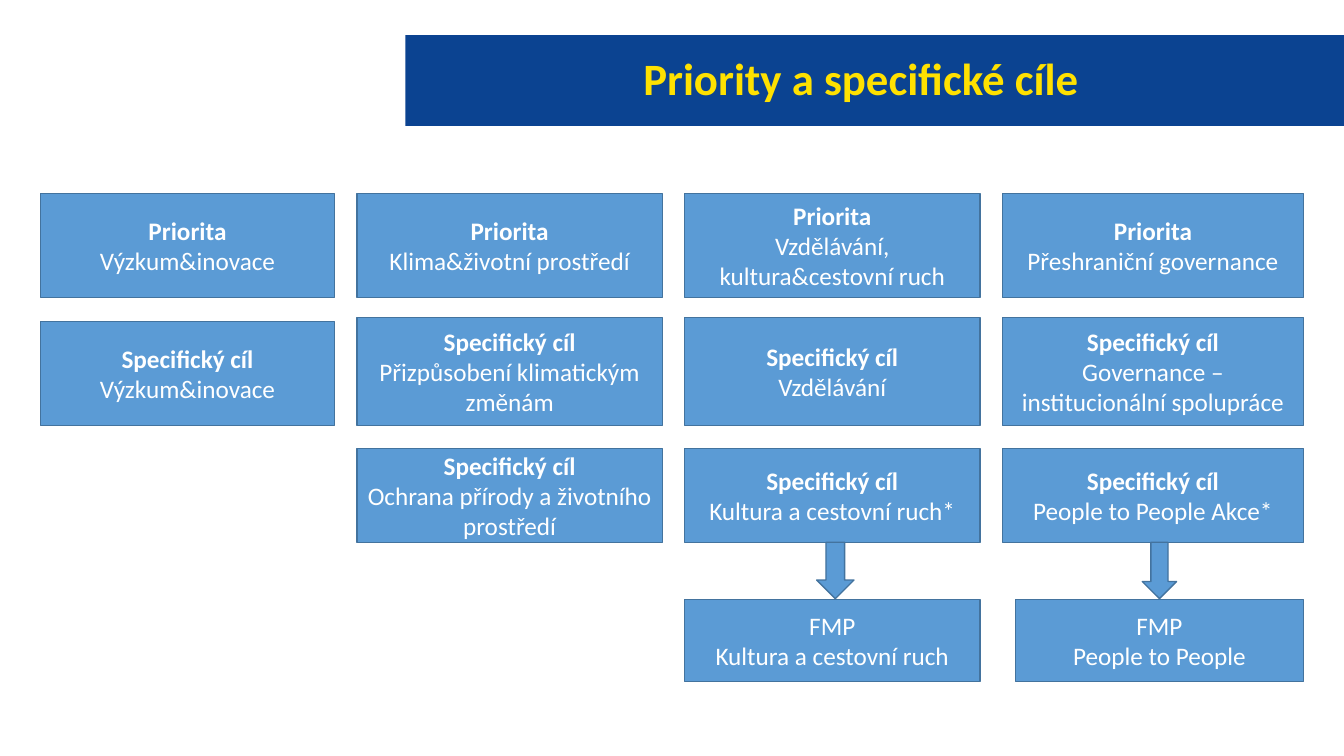
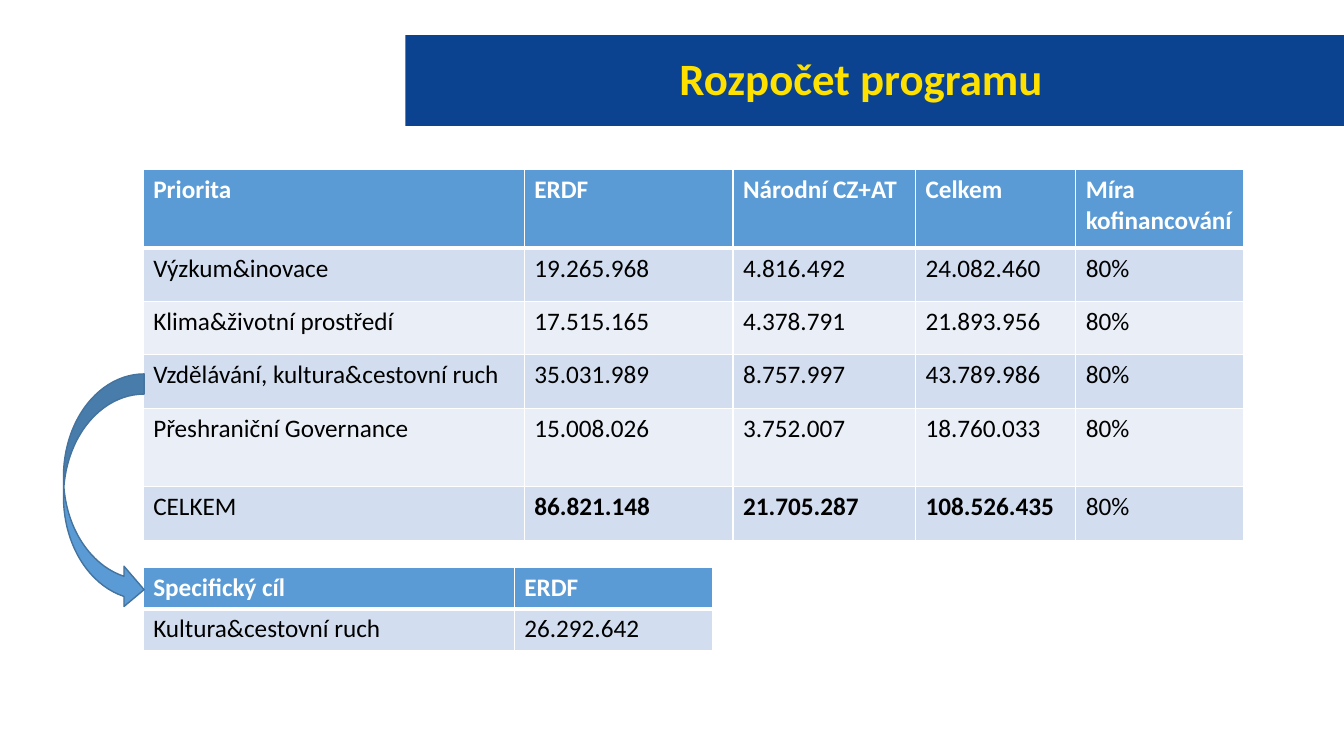
"""Build two slides on programme priorities and budget."""
from dataclasses import dataclass

from lxml.etree import SubElement
from pptx import Presentation
from pptx.dml.color import RGBColor
from pptx.enum.shapes import MSO_SHAPE
from pptx.enum.text import MSO_ANCHOR, PP_ALIGN
from pptx.oxml.ns import qn
from pptx.shapes.autoshape import Shape
from pptx.slide import Slide, SlideLayout
from pptx.table import _Cell
from pptx.text.text import Font
from pptx.util import Inches, Pt

NAVY = RGBColor(0x0B, 0x43, 0x91)
YELLOW = RGBColor(0xFF, 0xE1, 0x00)
BLUE = RGBColor(0x5B, 0x9B, 0xD5)
OUTLINE = RGBColor(0x43, 0x73, 0x9E)
PALE = RGBColor(0xD2, 0xDE, 0xEF)
PALEST = RGBColor(0xEA, 0xEF, 0xF7)
WHITE = RGBColor(0xFF, 0xFF, 0xFF)
BLACK = RGBColor(0x00, 0x00, 0x00)

TITLE_FORMAT = {"name": "Calibri", "size": Pt(32), "bold": True}
TEXT_FORMAT = {"name": "Calibri", "size": Pt(18), "bold": False}
STRONG_FORMAT = TEXT_FORMAT | {"bold": True}

COLUMNS = ((0.4, 2.92), (3.54, 3.03), (6.79, 2.93), (9.94, 2.99))
ROWS = ((1.92, 1.03), (3.15, 1.07), (4.45, 0.93), (5.95, 0.81))
HEADINGS = ("Priorita", "Specifický cíl", "Specifický cíl", "FMP")
FMP_ROW = 3


@dataclass(frozen=True)
class Card:
    """A box of the priority grid, optionally trimmed on its left or top."""

    column: int
    row: int
    text: str
    trim_left: float = 0
    trim_top: float = 0


@dataclass(frozen=True)
class Arrow:
    """A block arrow with its place in inches."""

    preset: MSO_SHAPE
    box: tuple[float, float, float, float]


@dataclass(frozen=True)
class Budget:
    """A budget table with its sizes in inches."""

    left: float
    top: float
    widths: tuple[float, ...]
    heights: tuple[float, ...]
    rows: tuple[tuple[str, ...], ...]
    strong: frozenset[tuple[int, int]] = frozenset()


CARDS = (
    Card(0, 0, "Výzkum&inovace"),
    Card(1, 0, "Klima&životní prostředí"),
    Card(2, 0, "Vzdělávání, kultura&cestovní ruch"),
    Card(3, 0, "Přeshraniční governance"),
    Card(0, 1, "Výzkum&inovace", trim_top=0.04),
    Card(1, 1, "Přizpůsobení klimatickým změnám"),
    Card(2, 1, "Vzdělávání"),
    Card(3, 1, "Governance – institucionální spolupráce"),
    Card(1, 2, "Ochrana přírody a životního prostředí"),
    Card(2, 2, "Kultura a cestovní ruch*"),
    Card(3, 2, "People to People Akce*"),
    Card(2, 3, "Kultura a cestovní ruch"),
    Card(3, 3, "People to People", trim_left=0.13),
)
FMP_ARROWS = (
    Arrow(MSO_SHAPE.DOWN_ARROW, (8.1, 5.38, 0.37, 0.56)),
    Arrow(MSO_SHAPE.DOWN_ARROW, (11.33, 5.38, 0.34, 0.56)),
)
DETAIL_ARROW = Arrow(MSO_SHAPE.CURVED_RIGHT_ARROW, (0.63, 3.71, 0.8, 2.34))

PROGRAMME = Budget(
    1.42, 1.68,
    (3.78, 2.07, 1.81, 1.59, 1.66),
    (0.78, 0.53, 0.53, 0.53, 0.78, 0.53),
    (
        ("Priorita", "ERDF", "Národní CZ+AT", "Celkem", "Míra kofinancování"),
        ("Výzkum&inovace", "19.265.968", "4.816.492", "24.082.460", "80%"),
        ("Klima&životní prostředí", "17.515.165", "4.378.791", "21.893.956", "80%"),
        ("Vzdělávání, kultura&cestovní ruch", "35.031.989", "8.757.997", "43.789.986", "80%"),
        ("Přeshraniční Governance", "15.008.026", "3.752.007", "18.760.033", "80%"),
        ("CELKEM", "86.821.148", "21.705.287", "108.526.435", "80%"),
    ),
    frozenset({(5, 1), (5, 2), (5, 3)}),
)
CULTURE = Budget(
    1.42, 5.63,
    (3.68, 1.97),
    (0.41, 0.41),
    (("Specifický cíl", "ERDF"), ("Kultura&cestovní ruch", "26.292.642")),
)


def format_font(font: Font, values: dict, color: RGBColor) -> None:
    """Apply format values and a colour to a font."""
    for key, value in values.items():
        setattr(font, key, value)
    font.color.rgb = color


def add_block(slide: Slide, preset: MSO_SHAPE, box: tuple[float, ...],
              fill: RGBColor = BLUE, outline: RGBColor | None = OUTLINE) -> Shape:
    """Draw a filled shape without a shadow."""
    block = slide.shapes.add_shape(preset, *map(Inches, box))
    block.shadow.inherit = False
    block.fill.solid()
    block.fill.fore_color.rgb = fill
    if outline is None:
        block.line.fill.background()
    else:
        block.line.color.rgb = outline
        block.line.width = Pt(1)
    return block


def add_card(slide: Slide, card: Card) -> None:
    """Draw one box of the grid with its heading and text."""
    left, width = COLUMNS[card.column]
    top, height = ROWS[card.row]
    box = (left + card.trim_left, top + card.trim_top,
           width - card.trim_left, height - card.trim_top)
    frame = add_block(slide, MSO_SHAPE.RECTANGLE, box).text_frame
    frame.word_wrap = True
    frame.vertical_anchor = MSO_ANCHOR.MIDDLE
    heading_format = TEXT_FORMAT if card.row == FMP_ROW else STRONG_FORMAT
    heading, detail = frame.paragraphs[0], frame.add_paragraph()
    for line, text, values in ((heading, HEADINGS[card.row], heading_format),
                               (detail, card.text, TEXT_FORMAT)):
        line.text = text
        line.alignment = PP_ALIGN.CENTER
        format_font(line.font, values, WHITE)


def set_borders(cell: _Cell, top: int, bottom: int) -> None:
    """Give a cell white borders, with top and bottom widths in points."""
    properties = cell._tc.get_or_add_tcPr()
    for side, width in (("L", 1), ("R", 1), ("T", top), ("B", bottom)):
        border = SubElement(properties, qn(f"a:ln{side}"), w=str(Pt(width)))
        fill = SubElement(border, qn("a:solidFill"))
        SubElement(fill, qn("a:srgbClr"), val=str(WHITE))


def add_budget(slide: Slide, budget: Budget) -> None:
    """Draw a budget table with a header and banded rows."""
    table = slide.shapes.add_table(
        len(budget.rows), len(budget.widths), Inches(budget.left), Inches(budget.top),
        Inches(sum(budget.widths)), Inches(sum(budget.heights))).table
    for column, width in zip(table.columns, budget.widths):
        column.width = Inches(width)
    for index, (row, height) in enumerate(zip(table.rows, budget.heights)):
        row.height = Inches(height)
        header = index == 0
        band = BLUE if header else PALE if index % 2 else PALEST
        for position, (cell, text) in enumerate(zip(row.cells, budget.rows[index])):
            set_borders(cell, top=3 if index == 1 else 1, bottom=3 if header else 1)
            cell.fill.solid()
            cell.fill.fore_color.rgb = band
            cell.text = text
            strong = header or (index, position) in budget.strong
            format_font(cell.text_frame.paragraphs[0].runs[0].font,
                        STRONG_FORMAT if strong else TEXT_FORMAT,
                        WHITE if header else BLACK)


def add_titled_slide(deck, layout: SlideLayout, heading: str) -> Slide:
    """Add a slide and fill its title placeholder."""
    slide = deck.slides.add_slide(layout)
    title = slide.shapes.title
    title.text_frame.text = heading
    title.text_frame.vertical_anchor = MSO_ANCHOR.MIDDLE
    line = title.text_frame.paragraphs[0]
    line.alignment = PP_ALIGN.CENTER
    line.line_spacing = 0.9
    format_font(line.runs[0].font, TITLE_FORMAT, YELLOW)
    return slide


def place_band(slide: Slide, layout: SlideLayout) -> None:
    """Put the title band on the layout, behind a resized title."""
    band = add_block(slide, MSO_SHAPE.RECTANGLE, (4.02, 0.35, 9.31, 0.9), NAVY, None)
    layout.shapes.element.insert(2, band.element)
    title = layout.placeholders[0]
    place = {"left": 4.02, "top": 0.35, "width": 9.04, "height": 0.9}
    for key, value in place.items():
        setattr(title, key, Inches(value))


def main() -> None:
    """Build and save the presentation."""
    deck = Presentation()
    deck.slide_width, deck.slide_height = Inches(13.33), Inches(7.5)
    layout = deck.slide_layouts.get_by_name("Title Only")

    priorities = add_titled_slide(deck, layout, "Priority a specifické cíle")
    place_band(priorities, layout)
    for card in CARDS:
        add_card(priorities, card)
    for arrow in FMP_ARROWS:
        add_block(priorities, arrow.preset, arrow.box)

    finances = add_titled_slide(deck, layout, "Rozpočet programu")
    for budget in (PROGRAMME, CULTURE):
        add_budget(finances, budget)
    add_block(finances, DETAIL_ARROW.preset, DETAIL_ARROW.box)

    deck.save("out.pptx")


if __name__ == "__main__":
    main()
